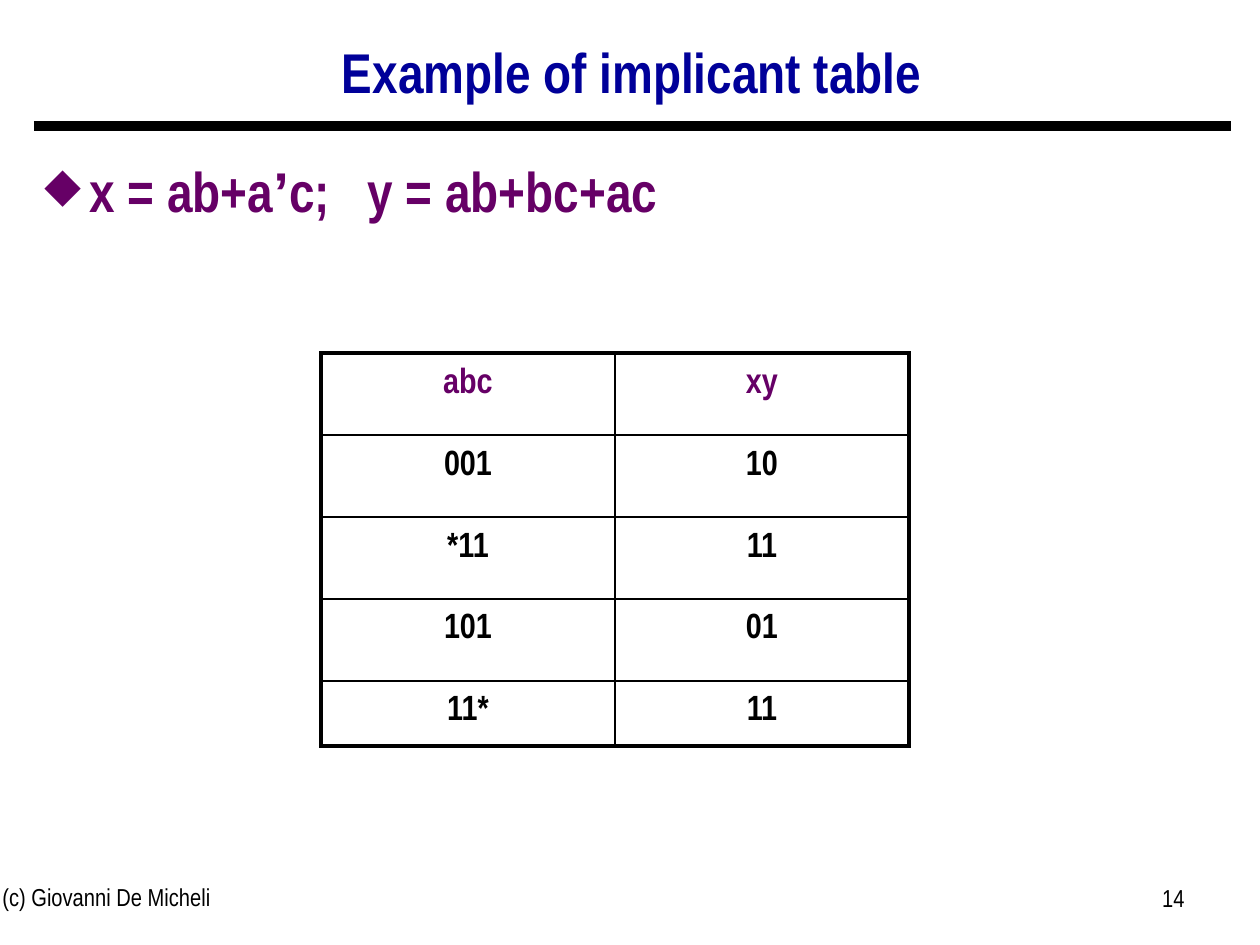
from lxml.etree import SubElement
from pptx import Presentation
from pptx.dml.color import RGBColor
from pptx.enum.shapes import MSO_CONNECTOR
from pptx.enum.text import MSO_ANCHOR, PP_ALIGN as Align
from pptx.oxml import parse_xml
from pptx.oxml.ns import nsdecls, qn
from pptx.util import Pt

PX = 914400 // 126
COLORS = {"title": "000099", "accent": "660066", "ink": "000000"}


def style(paragraph, size, color, bold=False, align=Align.LEFT, spacing=None):
    paragraph.alignment = align
    paragraph.line_spacing = spacing
    font = paragraph.font
    font.name, font.size, font.bold = "Arial Narrow", Pt(size), bold
    font.color.rgb = RGBColor.from_string(COLORS[color])


def add_text(left, top, width, height, text, anchor=MSO_ANCHOR.TOP):
    box = slide.shapes.add_textbox(left * PX, top * PX, width * PX, height * PX)
    frame = box.text_frame
    frame.word_wrap = True
    frame.vertical_anchor = anchor
    paragraph = frame.paragraphs[0]
    paragraph.text = text
    return paragraph


presentation = Presentation()
presentation.slide_width, presentation.slide_height = 1260 * PX, 945 * PX
slide = presentation.slides.add_slide(presentation.slide_layouts[6])

# Title and the rule below it
title = add_text(33, 28, 1198, 94, "Example of implicant table", MSO_ANCHOR.MIDDLE)
style(title, 32, "title", True, Align.CENTER, 0.9)
rule = slide.shapes.add_connector(MSO_CONNECTOR.STRAIGHT, 34 * PX, 126 * PX, 1231 * PX, 126 * PX)
rule.line.width = Pt(6)
rule.line.color.rgb = RGBColor.from_string(COLORS["ink"])
SubElement(rule._element.spPr, qn("a:effectLst"))

# Functions, with a diamond bullet and a tab stop before the second one
functions = add_text(32, 134, 867, 732, "")
for text, name in (("x = ab+a", "Arial Narrow"), ("’", "Arial"), ("c;\ty = ab+bc+ac", "Arial Narrow")):
    run = functions.add_run()
    run.text, run.font.name = text, name
style(functions, 32, "accent", True, spacing=1.25)
functions.space_before = Pt(10)
properties = functions._p.get_or_add_pPr()
properties.set("marL", str(45 * PX))
properties.set("indent", str(-45 * PX))
bullet = (
    f'<a:buClr {nsdecls("a")}><a:srgbClr val="{COLORS["accent"]}"/></a:buClr>',
    f'<a:buSzPct {nsdecls("a")} val="85000"/>',
    f'<a:buChar {nsdecls("a")} char="◆"/>',
    f'<a:tabLst {nsdecls("a")}><a:tab pos="{323 * PX}" algn="l"/></a:tabLst>',
)
for part in bullet:
    properties.find(qn("a:defRPr")).addprevious(parse_xml(part))

# Implicant table
rows = [("abc", "xy"), ("001", "10"), ("*11", "11"), ("101", "01"), ("11*", "11")]
last_row, last_column = len(rows) - 1, len(rows[0]) - 1
table = slide.shapes.add_table(len(rows), 2, 321 * PX, 353 * PX, 588 * PX, 382 * PX).table
table.first_row = table.horz_banding = False
for column in table.columns:
    column.width = 294 * PX
for r, values in enumerate(rows):
    table.rows[r].height = (54 if r == last_row else 82) * PX
    for c, value in enumerate(values):
        cell = table.cell(r, c)
        cell.text = value
        style(cell.text_frame.paragraphs[0], 20, "ink" if r else "accent", True, Align.CENTER, 1.25)
        outer = {"L": c == 0, "R": c == last_column, "T": r == 0, "B": r == last_row}
        for side, thick in outer.items():
            cell._tc.get_or_add_tcPr().append(parse_xml(
                f'<a:ln{side} {nsdecls("a")} w="{Pt(2.25 if thick else 1)}"><a:solidFill>'
                f'<a:srgbClr val="{COLORS["ink"]}"/></a:solidFill></a:ln{side}>'))
        cell.fill.background()

# Footer
style(add_text(-10, 876, 399, 66, "(c) Giovanni De Micheli"), 14, "ink")
style(add_text(903, 877, 294, 66, "14"), 14, "ink", align=Align.RIGHT)

presentation.save("out.pptx")
